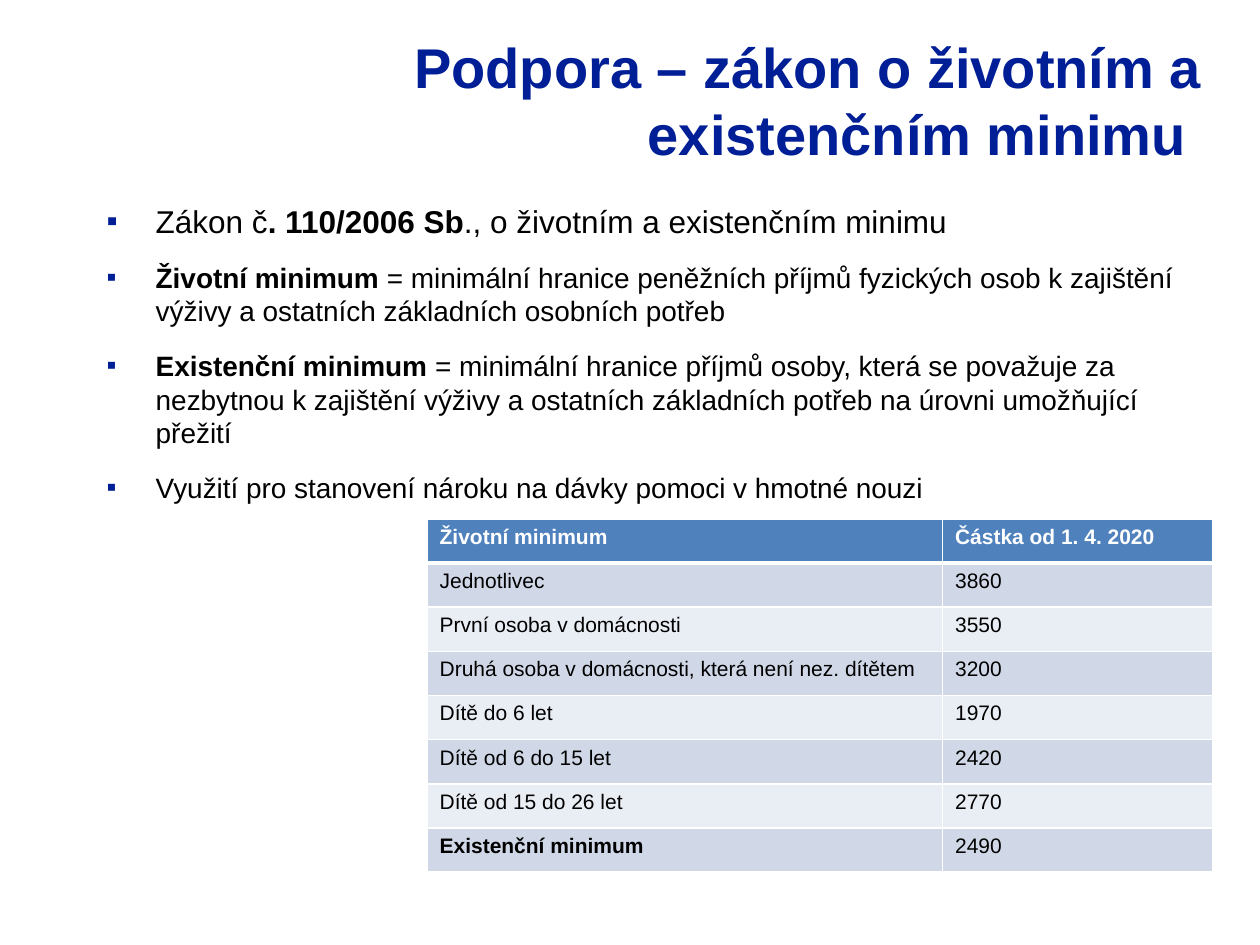
"""Build the slide on the Czech living and subsistence minimum."""
from dataclasses import dataclass

from lxml.etree import SubElement
from pptx import Presentation
from pptx.dml.color import RGBColor
from pptx.enum.text import PP_ALIGN
from pptx.oxml.ns import qn
from pptx.util import Cm, Pt


@dataclass(frozen=True)
class Theme:
    font: str = "Arial"
    accent: str = "001E96"
    text: str = "000000"
    white: str = "FFFFFF"
    header: str = "4F81BD"
    bands: tuple = ("D0D8E8", "E9EDF4")
    title_size: int = 32
    lead_size: int = 18
    body_size: int = 16
    table_size: int = 12


class SlideBuilder:
    def __init__(self, slide, theme):
        self.slide = slide
        self.theme = theme

    def format_run(self, r, size, color, bold=False):
        r.font.name = self.theme.font
        r.font.size = Pt(size)
        r.font.bold = bold
        r.font.color.rgb = RGBColor.from_string(color)

    def text_box(self, left, top, width, height):
        box = self.slide.shapes.add_textbox(Cm(left), Cm(top), Cm(width), Cm(height))
        tf = box.text_frame
        tf.word_wrap = True
        return tf

    def title(self, text, *box):
        tf = self.text_box(*box)
        tf.text = text
        p = tf.paragraphs[0]
        p.alignment = PP_ALIGN.RIGHT
        self.format_run(p.runs[0], self.theme.title_size, self.theme.accent, True)

    def bullet(self, p, indent):
        pPr = p._p.get_or_add_pPr()
        pPr.set("marL", str(Cm(indent)))
        pPr.set("indent", str(-Cm(indent)))
        color = SubElement(pPr, qn("a:buClr"))
        SubElement(color, qn("a:srgbClr"), val=self.theme.accent)
        SubElement(pPr, qn("a:buFont"), typeface=self.theme.font)
        SubElement(pPr, qn("a:buChar"), char="▪")

    def bullets(self, items, *box):
        tf = self.text_box(*box)
        for i, (size, parts) in enumerate(items):
            p = tf.add_paragraph() if i else tf.paragraphs[0]
            self.bullet(p, 0.99)
            p.space_before = Pt(12 if i else 0)
            for text, bold in parts:
                r = p.add_run()
                r.text = text
                self.format_run(r, size, self.theme.text, bold)

    def borders(self, cell, bottom):
        tcPr = cell._tc.get_or_add_tcPr()
        for side, width in (("L", 1), ("R", 1), ("T", 1), ("B", bottom)):
            line = SubElement(tcPr, qn(f"a:ln{side}"), w=str(Pt(width)))
            fill = SubElement(line, qn("a:solidFill"))
            SubElement(fill, qn("a:srgbClr"), val=self.theme.white)

    def cell(self, cell, text, fill, color, bold, bottom):
        cell.text = text
        self.format_run(cell.text_frame.paragraphs[0].runs[0],
                        self.theme.table_size, color, bold)
        self.borders(cell, bottom)
        cell.fill.solid()
        cell.fill.fore_color.rgb = RGBColor.from_string(fill)

    def table(self, rows, left, top, widths, row_height):
        th = self.theme
        table = self.slide.shapes.add_table(
            len(rows), len(widths), Cm(left), Cm(top),
            Cm(sum(widths)), Cm(row_height * len(rows))).table
        for column, width in zip(table.columns, widths):
            column.width = Cm(width)
        last = len(rows) - 1
        for i, values in enumerate(rows):
            is_header = i == 0
            fill = th.header if is_header else th.bands[(i - 1) % 2]
            color = th.white if is_header else th.text
            for j, text in enumerate(values):
                bold = is_header or (i == last and j == 0)
                self.cell(table.cell(i, j), text, fill, color, bold,
                          3 if is_header else 1)


def main():
    prs = Presentation()
    prs.slide_width, prs.slide_height = Cm(25.4), Cm(19.05)
    theme = Theme()
    s = SlideBuilder(prs.slides.add_slide(prs.slide_layouts[6]), theme)

    s.title("Podpora – zákon o životním a existenčním minimu ",
            6.1, 0.53, 18.39, 3.81)
    s.bullets([
        (theme.lead_size, [
            ("Zákon č", False), (". 110/2006 Sb", True),
            ("., o životním a existenčním minimu", False)]),
        (theme.body_size, [
            ("Životní minimum ", True),
            ("= minimální hranice peněžních příjmů fyzických osob k zajištění "
             "výživy a ostatních základních osobních potřeb", False)]),
        (theme.body_size, [
            ("Existenční minimum ", True),
            ("= minimální hranice příjmů osoby, která se považuje za nezbytnou "
             "k zajištění výživy a ostatních základních potřeb na úrovni "
             "umožňující přežití", False)]),
        (theme.body_size, [
            ("Využití pro stanovení nároku na dávky pomoci v hmotné nouzi", False)]),
    ], 1.9, 3.94, 22.61, 13.08)
    s.table([
        ("Životní minimum", "Částka od 1. 4. 2020"),
        ("Jednotlivec", "3860"),
        ("První osoba v domácnosti", "3550"),
        ("Druhá osoba v domácnosti, která není nez. dítětem", "3200"),
        ("Dítě do 6 let", "1970"),
        ("Dítě od 6 do 15 let", "2420"),
        ("Dítě od 15 do 26 let", "2770"),
        ("Existenční minimum", "2490"),
    ], 8.61, 10.46, (10.39, 5.44), 0.89)
    prs.save("out.pptx")


if __name__ == "__main__":
    main()
